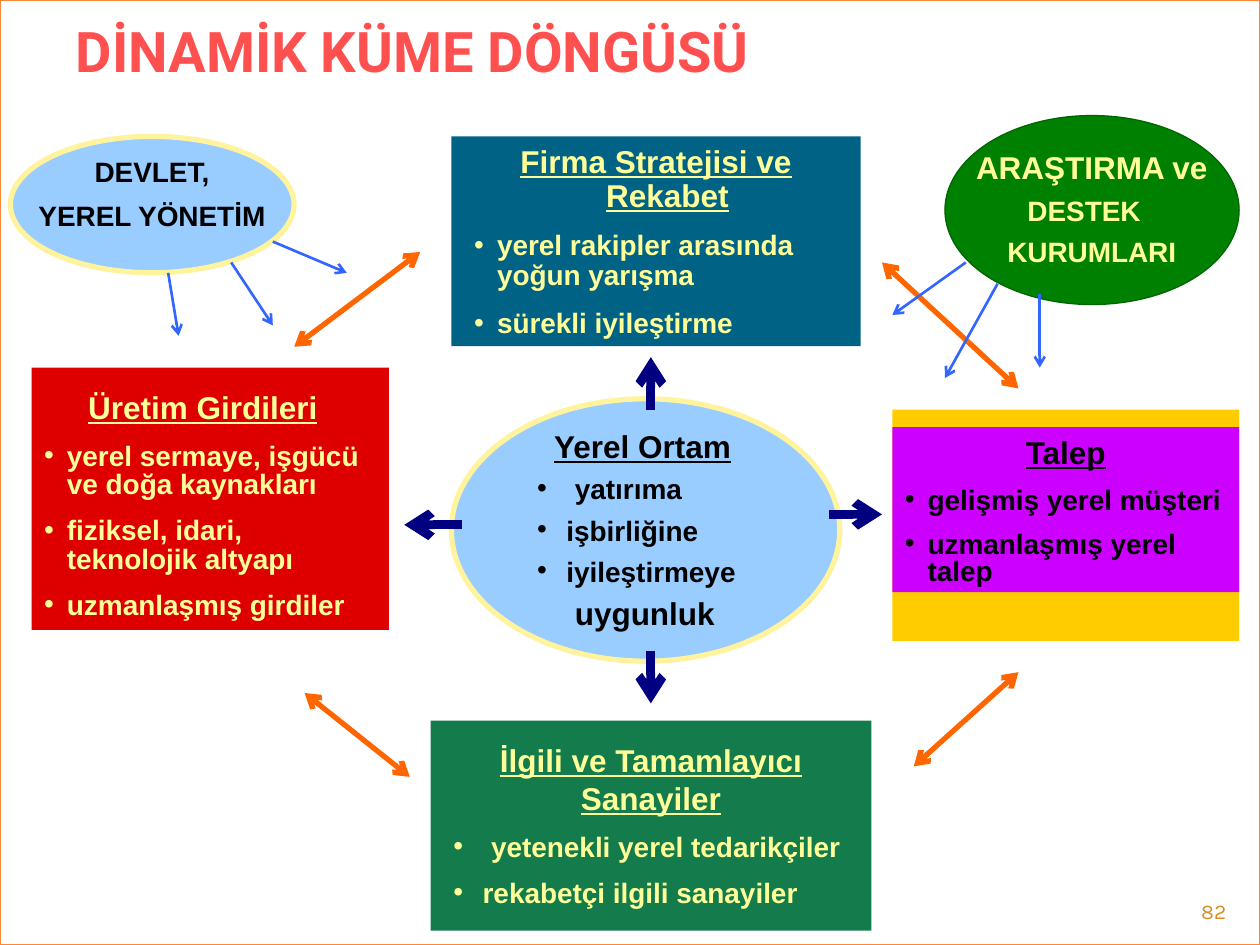
from lxml import etree
from pptx import Presentation
from pptx.dml.color import RGBColor
from pptx.enum.shapes import MSO_CONNECTOR as Connector, MSO_SHAPE as Shape
from pptx.enum.text import MSO_ANCHOR as Anchor, PP_ALIGN as Align
from pptx.oxml.ns import qn
from pptx.util import Cm, Pt

COLORS = {
    "white": "FFFFFF", "frame": "FE8637", "title": "FF5050", "number": "D48F29",
    "teal": "006386", "yellow": "FFCC00", "green": "137B4C", "red": "DE0000",
    "violet": "CC00FF", "sky": "99CCFF", "cream": "FFF39D", "forest": "008000",
    "dark forest": "006600", "orange": "FF6600", "navy": "000080", "blue": "3366FF",
    "black": "000000", "pale": "FFFF99",
}

TITLE = "DİNAMİK KÜME DÖNGÜSÜ"
PAGE_NUMBER = "82"

# Left, top, width, height in cm, then colours
BOXES = [
    ((9.1, 2.75, 8.25, 4.23), "teal"),
    ((17.99, 8.26, 6.99, 4.66), "yellow"),
    ((8.68, 14.53, 8.89, 4.23), "green"),
    ((0.64, 7.41, 7.2, 5.29), "red"),
    ((17.99, 8.61, 6.99, 3.33), "violet"),
]
OVALS = [
    ((9.1, 8.04, 7.83, 5.29), "sky", "cream", 3),
    ((0.21, 2.75, 5.72, 2.75), "sky", "cream", 3),
    ((19.05, 2.33, 5.93, 3.81), "forest", "dark forest", 0.75),
]

# Start x, y and end x, y in cm
CYCLE_ARROWS = [
    (8.47, 5.08, 5.93, 6.99), (20.53, 13.55, 18.42, 15.45),
    (6.14, 13.97, 8.26, 15.66), (17.78, 5.29, 20.53, 7.83),
]
CENTRE_ARROWS = [
    (16.72, 10.37, 17.78, 10.37), (9.31, 10.58, 8.15, 10.58),
    (13.12, 13.12, 13.12, 14.18), (13.12, 8.26, 13.12, 7.2),
]
SUPPORT_ARROWS = [
    (3.39, 5.5, 3.6, 6.77), (4.66, 5.29, 5.5, 6.56), (5.5, 4.87, 6.99, 5.5),
    (19.47, 5.29, 17.99, 6.35), (20.11, 5.72, 19.05, 7.62), (20.96, 5.93, 20.96, 7.41),
]

HANGING = {"left": 0.46, "first": -0.46}
CENTRED = {"align": Align.CENTER}
HEADING = {"size": 18, "underline": True, "before": 1}
BULLET = {"bullet": True, **HANGING}
BULLET_WIDE = {"bullet": True, "left": 0.59, "first": -0.59}
BULLET_WIDER = {"bullet": True, "left": 0.76, "first": -0.76}

# Place, colour, line spacing, then paragraphs with their format
TEXTS = [
    ((17.99, 8.61, 6.99, 3.33), "black", 0.8, [
        ("Talep", {**HEADING, **CENTRED, **HANGING, "spacing": 1}),
        ("gelişmiş yerel müşteri", BULLET),
        ("uzmanlaşmış yerel talep", BULLET),
    ]),
    ((0.64, 7.62, 6.99, 5), "pale", 0.85, [
        ("Üretim Girdileri", {**HEADING, "left": 0.89, "spacing": 1.1}),
        ("yerel sermaye, işgücü ve doğa kaynakları", BULLET),
        ("fiziksel, idari, teknolojik altyapı", BULLET),
        ("uzmanlaşmış girdiler", BULLET),
    ]),
    ((8.89, 14.82, 8.47, 3.73), "pale", 0.85, [
        ("İlgili ve Tamamlayıcı Sanayiler", {**HEADING, **CENTRED, "spacing": 1}),
        ("yetenekli yerel tedarikçiler", BULLET_WIDER),
        ("rekabetçi ilgili sanayiler", BULLET_WIDE),
    ]),
    ((10.58, 8.69, 5.93, 4.27), "black", 0.7, [
        ("Yerel Ortam", {**HEADING, "left": 0.34}),
        ("yatırıma", BULLET_WIDER),
        ("işbirliğine", BULLET_WIDE),
        ("iyileştirmeye", BULLET_WIDE),
        ("uygunluk", {"size": 18, "left": 0.76}),
    ]),
    ((9.31, 2.82, 7.83, 4.14), "pale", 0.9, [
        ("Firma Stratejisi ve Rekabet", {**HEADING, **CENTRED, **HANGING}),
        ("yerel rakipler arasında yoğun yarışma", BULLET),
        ("sürekli iyileştirme", BULLET),
    ]),
    ((0.42, 3.12, 5.29, 1.68), "black", 0.8, [
        ("DEVLET,", CENTRED),
        ("YEREL YÖNETİM", CENTRED),
    ]),
    ((19.26, 3.07, 5.5, 2.41), "pale", 0.7, [
        ("ARAŞTIRMA ve", {**CENTRED, "size": 18}),
        ("DESTEK", {**CENTRED, "right": 0.31}),
        ("KURUMLARI", CENTRED),
    ]),
]


def rgb(name):
    return RGBColor.from_string(COLORS[name])


def write(paragraph, text, color, font="Arial", size=16, bold=True, underline=False,
          align=Align.LEFT, spacing=1, before=10, left=0, first=0, right=0, bullet=False):
    paragraph.alignment = align
    paragraph.line_spacing = spacing
    paragraph.space_before = Pt(before)
    run = paragraph.add_run()
    run.text = text
    run.font.name, run.font.size = font, Pt(size)
    run.font.bold, run.font.underline = bold, underline
    run.font.color.rgb = rgb(color)
    properties = paragraph._p.get_or_add_pPr()
    for key, length in (("marL", left), ("marR", right), ("indent", first)):
        properties.set(key, str(Cm(length)))
    if bullet:
        etree.SubElement(properties, qn("a:buFont")).set("typeface", "Arial")
        etree.SubElement(properties, qn("a:buChar")).set("char", "•")


def add_figure(slide, kind, place, fill, line=None, width=0.75):
    figure = slide.shapes.add_shape(kind, *map(Cm, place))
    figure.shadow.inherit = False
    figure.fill.solid()
    figure.fill.fore_color.rgb = rgb(fill)
    if line:
        figure.line.color.rgb = rgb(line)
        figure.line.width = Pt(width)
    else:
        figure.line.fill.background()


def add_arrows(slide, routes, color, width, both_ends=False):
    for route in routes:
        arrow = slide.shapes.add_connector(Connector.STRAIGHT, *map(Cm, route))
        arrow.line.color.rgb = rgb(color)
        arrow.line.width = Pt(width)
        line = arrow.line._get_or_add_ln()
        for end in ("a:headEnd", "a:tailEnd") if both_ends else ("a:tailEnd",):
            etree.SubElement(line, qn(end)).set("type", "arrow")
        etree.SubElement(arrow._element.spPr, qn("a:effectLst"))


def add_text(slide, place, color, spacing, paragraphs):
    frame = slide.shapes.add_textbox(*map(Cm, place)).text_frame
    frame.word_wrap = True
    for index, (text, style) in enumerate(paragraphs):
        paragraph = frame.add_paragraph() if index else frame.paragraphs[0]
        write(paragraph, text, color, **{"spacing": spacing, **style})


def main():
    deck = Presentation()
    deck.slide_width, deck.slide_height = Cm(25.4), Cm(19.05)
    slide = deck.slides.add_slide(deck.slide_layouts[5])

    add_figure(slide, Shape.RECTANGLE, (0, 0, 25.4, 19.05), "white", "frame")
    for place, fill in BOXES:
        add_figure(slide, Shape.RECTANGLE, place, fill)
    add_arrows(slide, CYCLE_ARROWS, "orange", 3, both_ends=True)
    for place, fill, line, width in OVALS:
        add_figure(slide, Shape.OVAL, place, fill, line, width)
    add_arrows(slide, CENTRE_ARROWS, "navy", 5)
    add_arrows(slide, SUPPORT_ARROWS, "blue", 1.5)
    for text in TEXTS:
        add_text(slide, *text)

    title = slide.shapes.title
    title.left, title.top, title.width, title.height = map(Cm, (1.27, 0.13, 22.86, 1.78))
    title.text_frame.vertical_anchor = Anchor.MIDDLE
    write(title.text_frame.paragraphs[0], TITLE, "title", font="Roboto", size=32, before=0)
    # The title comes first in the tree, so it is raised above the white frame
    slide.shapes._spTree.append(title._element)

    number_style = {"font": "Karla", "size": 12, "bold": False, "align": Align.RIGHT, "before": 0}
    add_text(slide, (22.86, 17.98, 2.11, 0.69), "number", 1, [(PAGE_NUMBER, number_style)])
    deck.save("out.pptx")


if __name__ == "__main__":
    main()
